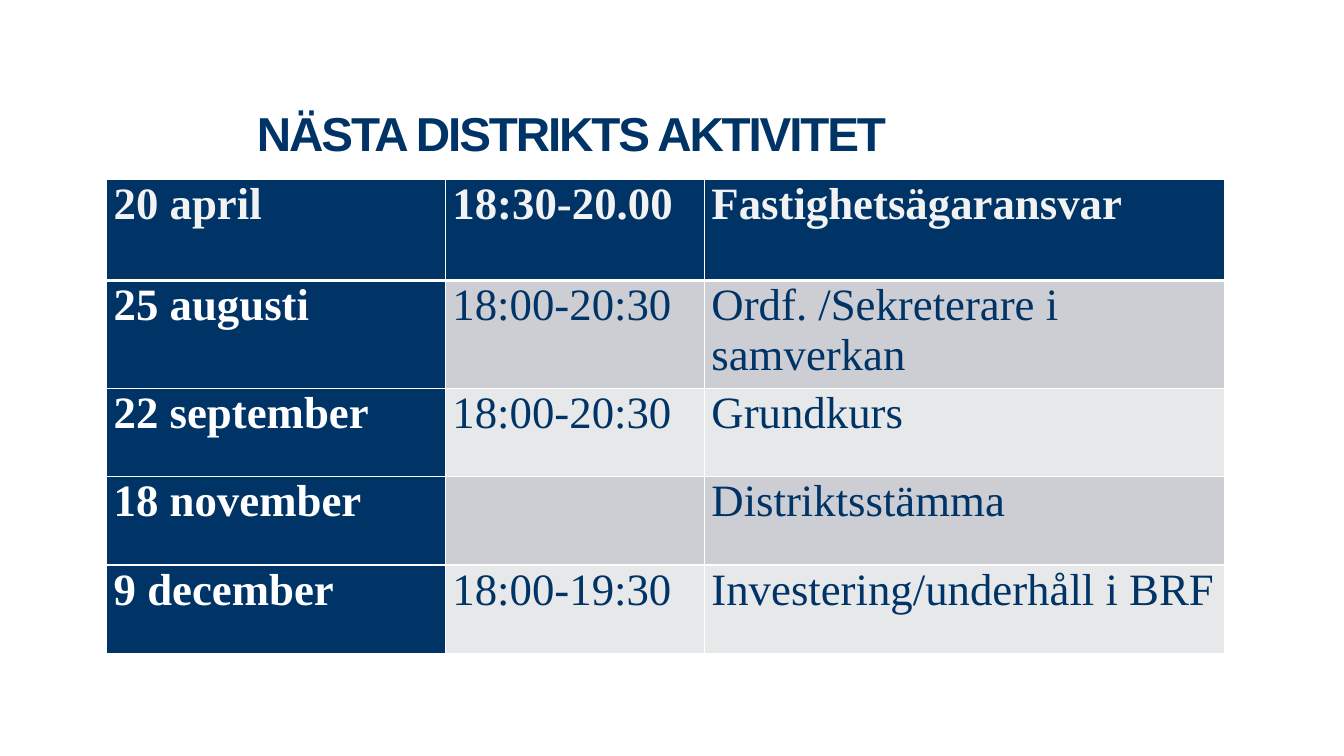
from lxml.etree import SubElement
from pptx import Presentation
from pptx.dml.color import RGBColor
from pptx.enum.text import MSO_ANCHOR as Anchor
from pptx.oxml.ns import qn
from pptx.util import Pt

NAVY = RGBColor(0x00, 0x33, 0x66)
WHITE = RGBColor(0xFF, 0xFF, 0xFF)
OFF_WHITE = RGBColor(0xF2, 0xF2, 0xF2)
DARK_BAND = RGBColor(0xCC, 0xCE, 0xD3)
LIGHT_BAND = RGBColor(0xE7, 0xE8, 0xEA)

ACTIVITIES = [
    ("20 april", "18:30-20.00", "Fastighetsägaransvar"),
    ("25 augusti", "18:00-20:30", "Ordf. /Sekreterare i samverkan"),
    ("22 september", "18:00-20:30", "Grundkurs"),
    ("18 november", "", "Distriktsstämma"),
    ("9 december", "18:00-19:30", "Investering/underhåll i BRF"),
]
COLUMN_WIDTHS = [242, 185, 372]
ROW_HEIGHTS = [72, 72.7, 63.2, 63.2, 63.2]
TITLE_FORMAT = {"name": "Arial", "size": Pt(34), "bold": True}
CELL_FORMAT = {"name": "Times New Roman", "size": Pt(32)}
NO_MARGINS = dict.fromkeys(("margin_left", "margin_top", "margin_right", "margin_bottom"), 0)
CELL_MARGINS = {**NO_MARGINS, "margin_left": Pt(5.2), "margin_right": Pt(5.2)}


def apply_format(target, values):
    for name, value in values.items():
        setattr(target, name, value)


def add_title(slide, text):
    frame = slide.shapes.add_textbox(Pt(183.6), Pt(77), Pt(631.4), Pt(51)).text_frame
    apply_format(frame, {**NO_MARGINS, "word_wrap": True, "vertical_anchor": Anchor.TOP})
    paragraph = frame.paragraphs[0]
    paragraph.line_spacing = 0.95
    run = paragraph.add_run()
    run.text = text
    apply_format(run.font, TITLE_FORMAT)
    run.font.color.rgb = NAVY
    run.font._element.set("spc", "-150")


def set_borders(cell, widths):
    """Draw white borders; widths maps each side (L, R, T, B) to points."""
    properties = cell._tc.get_or_add_tcPr()
    for position, (side, width) in enumerate(widths.items()):
        line = SubElement(properties, qn(f"a:ln{side}"), w=str(Pt(width)))
        fill = SubElement(line, qn("a:solidFill"))
        SubElement(fill, qn("a:srgbClr"), val=str(WHITE))
        properties.insert(position, line)


def cell_colors(row, column):
    """Return the fill, the font colour and whether the cell is a heading."""
    if row == 0:
        return NAVY, OFF_WHITE, True
    if column == 0:
        return NAVY, WHITE, True
    return (DARK_BAND if row % 2 else LIGHT_BAND), NAVY, False


def fill_cell(cell, text, row, column):
    fill_color, font_color, is_heading = cell_colors(row, column)
    apply_format(cell, {**CELL_MARGINS, "vertical_anchor": Anchor.TOP, "text": text})
    font = cell.text_frame.paragraphs[0].font
    apply_format(font, {**CELL_FORMAT, "bold": is_heading})
    font.color.rgb = font_color
    for run in cell.text_frame.paragraphs[0].runs:
        apply_format(run.font, {**CELL_FORMAT, "bold": is_heading})
        run.font.color.rgb = font_color
    cell.fill.solid()
    cell.fill.fore_color.rgb = fill_color
    set_borders(cell, {"L": 1, "R": 1, "T": 3 if row == 1 else 1, "B": 3 if row == 0 else 1})


def add_activity_table(slide):
    table = slide.shapes.add_table(
        len(ROW_HEIGHTS), len(COLUMN_WIDTHS), Pt(76), Pt(128.4),
        Pt(sum(COLUMN_WIDTHS)), Pt(sum(ROW_HEIGHTS)),
    ).table
    for column, width in zip(table.columns, COLUMN_WIDTHS):
        column.width = Pt(width)
    for row, height in zip(table.rows, ROW_HEIGHTS):
        row.height = Pt(height)
    for row, activity in enumerate(ACTIVITIES):
        for column, text in enumerate(activity):
            fill_cell(table.cell(row, column), text, row, column)


def main():
    presentation = Presentation()
    presentation.slide_width = Pt(960)
    presentation.slide_height = Pt(540)
    slide = presentation.slides.add_slide(presentation.slide_layouts[6])
    add_title(slide, "NÄSTA DISTRIKTS AKTIVITET")
    add_activity_table(slide)
    presentation.save("out.pptx")


if __name__ == "__main__":
    main()
